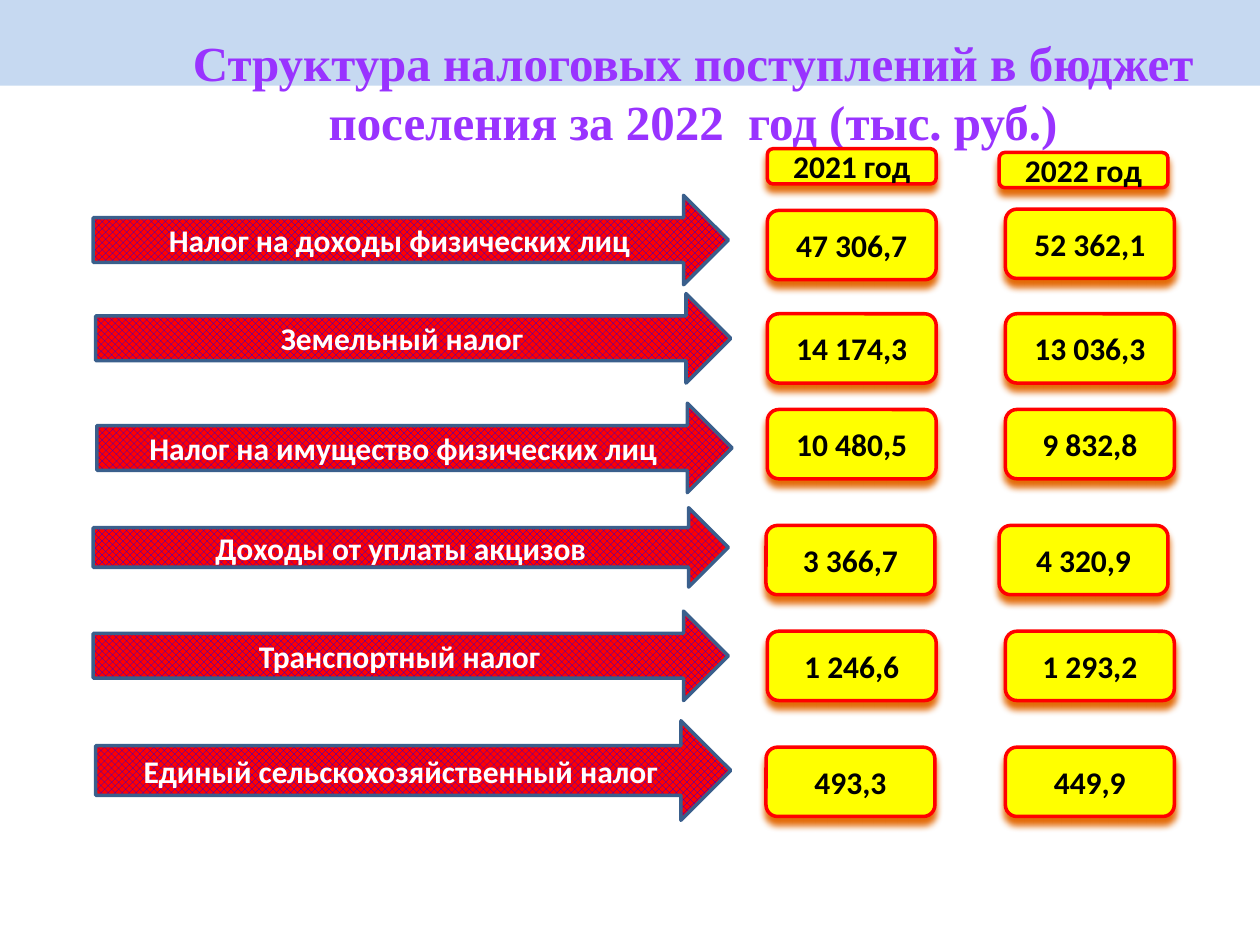
from pptx import Presentation
from pptx.dml.color import RGBColor
from pptx.enum.dml import MSO_PATTERN
from pptx.enum.shapes import MSO_SHAPE
from pptx.enum.text import MSO_ANCHOR, PP_ALIGN
from pptx.oxml import parse_xml
from pptx.oxml.ns import nsdecls
from pptx.util import Inches, Pt

TITLE = "Структура налоговых поступлений в бюджет поселения за 2022  год (тыс. руб.)"
YEARS = [("2021 год", 6.09, 1.18), ("2022 год", 7.93, 1.21)]
TAXES = [
    {"name": "Налог на доходы физических лиц", "arrow": (0.74, 1.55, 0.71),
     "amounts": [("47 306,7", 6.09, 1.67), ("52 362,1", 7.98, 1.66)]},
    {"name": "Земельный налог", "arrow": (0.76, 2.33, 0.71),
     "amounts": [("14 174,3", 6.09, 2.49), ("13 036,3", 7.98, 2.49)]},
    {"name": "Налог на имущество физических лиц", "arrow": (0.77, 3.2, 0.71),
     "amounts": [("10 480,5", 6.09, 3.25), ("9 832,8", 7.98, 3.25)]},
    {"name": "Доходы от уплаты акцизов", "arrow": (0.74, 4.03, 0.63),
     "amounts": [("3 366,7", 6.08, 4.17), ("4 320,9", 7.93, 4.17)]},
    {"name": "Транспортный налог", "arrow": (0.74, 4.85, 0.71),
     "amounts": [("1 246,6", 6.09, 5.01), ("1 293,2", 7.98, 5.01)]},
    {"name": "Единый сельскохозяйственный налог", "arrow": (0.76, 5.72, 0.79),
     "amounts": [("493,3", 6.08, 5.93), ("449,9", 7.98, 5.93)]},
]
ARROW_WIDTH = 5.04
CARD_WIDTH, YEAR_HEIGHT, AMOUNT_HEIGHT = 1.34, 0.28, 0.55

THEME = {
    "band": "C6D9F1", "title": "9933FF",
    "arrow": "FF0000", "lattice": "0000FF", "arrow_line": "3A5F8C", "arrow_text": "FFFFFF",
    "card": "FFFF00", "card_line": "FF0000", "card_text": "000000", "glow": "E46C0A",
    "title_font": "Times New Roman", "body_font": "Calibri",
    "title_size": 28, "body_size": 18, "line_width": 2,
}


def color(key):
    return RGBColor.from_string(THEME[key])


def write(shape, text, *, ink, font="body_font", size="body_size", anchor=MSO_ANCHOR.MIDDLE):
    frame = shape.text_frame
    frame.word_wrap = True
    frame.vertical_anchor = anchor
    paragraph = frame.paragraphs[0]
    paragraph.alignment = PP_ALIGN.CENTER
    run = paragraph.add_run()
    run.text = text
    run.font.name = THEME[font]
    run.font.size = Pt(THEME[size])
    run.font.bold = True
    run.font.color.rgb = color(ink)


def add_outlined(slide, preset, box, line):
    shape = slide.shapes.add_shape(preset, *map(Inches, box))
    shape.shadow.inherit = False
    shape.line.color.rgb = color(line)
    shape.line.width = Pt(THEME["line_width"])
    return shape


def add_arrow(slide, name, left, top, height):
    arrow = add_outlined(slide, MSO_SHAPE.RIGHT_ARROW, (left, top, ARROW_WIDTH, height), "arrow_line")
    arrow.fill.patterned()
    arrow.fill.pattern = MSO_PATTERN.OUTLINED_DIAMOND
    arrow.fill.fore_color.rgb = color("lattice")
    arrow.fill.back_color.rgb = color("arrow")
    write(arrow, name, ink="arrow_text")


def add_card(slide, text, left, top, height):
    card = add_outlined(slide, MSO_SHAPE.ROUNDED_RECTANGLE, (left, top, CARD_WIDTH, height), "card_line")
    card.fill.solid()
    card.fill.fore_color.rgb = color("card")
    effects = card._element.spPr.find("{http://schemas.openxmlformats.org/drawingml/2006/main}effectLst")
    effects.append(parse_xml(
        f'<a:outerShdw {nsdecls("a")} blurRad="{Pt(4)}" dist="{Pt(4)}" dir="5400000" '
        f'algn="ctr" rotWithShape="0"><a:srgbClr val="{THEME["glow"]}"/></a:outerShdw>'))
    write(card, text, ink="card_text")


def main():
    deck = Presentation()
    deck.slide_width, deck.slide_height = Inches(10), Inches(7.5)
    slide = deck.slides.add_slide(deck.slide_layouts[6])

    band = slide.shapes.add_shape(MSO_SHAPE.RECTANGLE, 0, 0, deck.slide_width, Inches(0.68))
    band.shadow.inherit = False
    band.fill.solid()
    band.fill.fore_color.rgb = color("band")
    band.line.fill.background()

    title = slide.shapes.add_textbox(Inches(1), Inches(0.21), Inches(9), Inches(1.25))
    write(title, TITLE, ink="title", font="title_font", size="title_size", anchor=MSO_ANCHOR.TOP)

    for year, left, top in YEARS:
        add_card(slide, year, left, top, YEAR_HEIGHT)
    for tax in TAXES:
        add_arrow(slide, tax["name"], *tax["arrow"])
        for amount, left, top in tax["amounts"]:
            add_card(slide, amount, left, top, AMOUNT_HEIGHT)

    deck.save("out.pptx")


if __name__ == "__main__":
    main()
